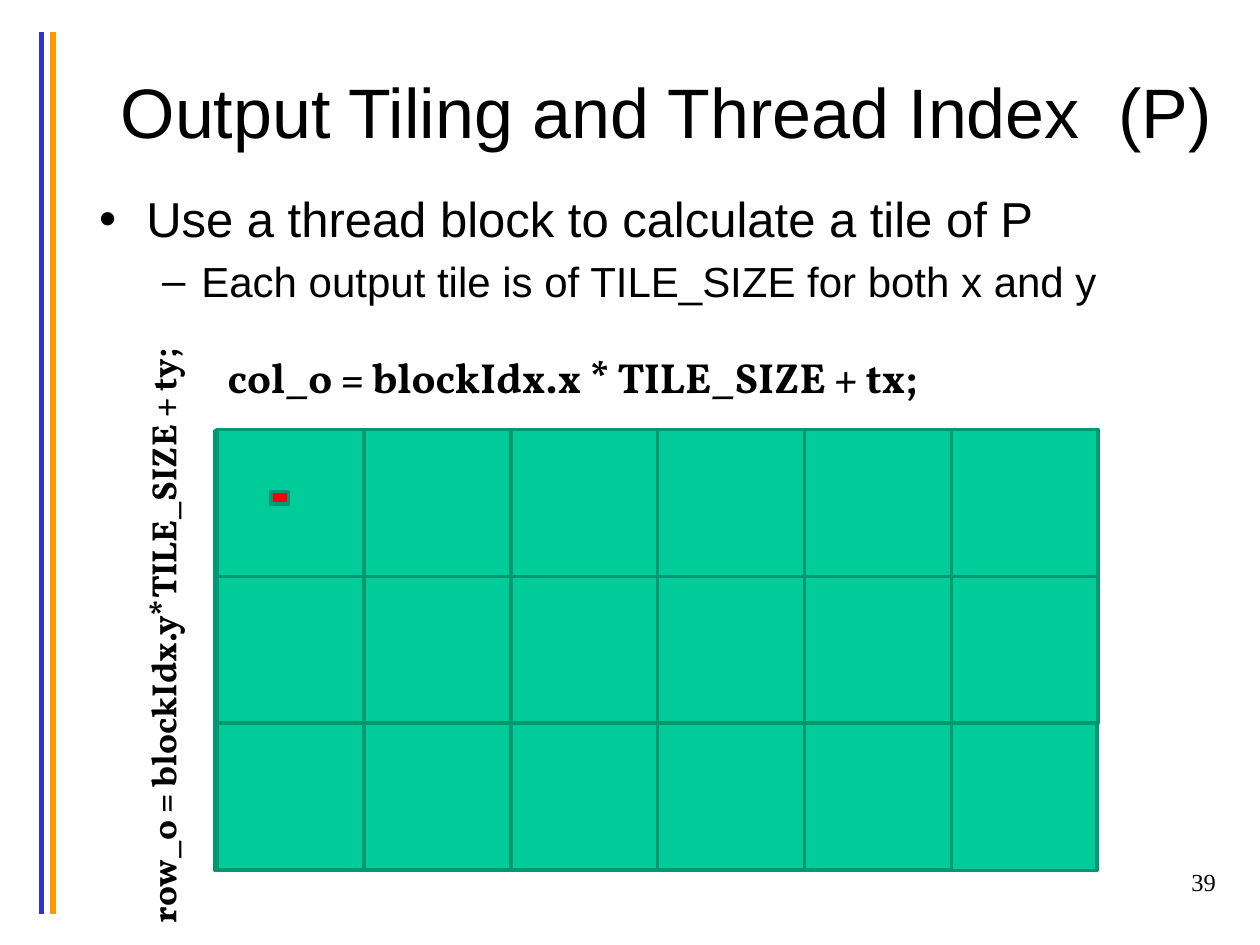
from lxml import etree
from pptx import Presentation
from pptx import util as u
from pptx.dml.color import RGBColor
from pptx.enum import shapes as kinds, text
from pptx.oxml.ns import qn

Cm, Pt = u.Cm, u.Pt


def paint(color_format, hex_string):
    color_format.rgb = RGBColor.from_string(hex_string)


def style(paragraph, size, font, bold=False):
    for run in paragraph.runs:
        run.font.size = Pt(size)
        run.font.name = font
        run.font.bold = bold
        paint(run.font.color, "000000")


prs = Presentation()
prs.slide_width, prs.slide_height = Cm(25.4), Cm(19.05)
slide = prs.slides.add_slide(prs.slide_layouts[5])

# Stripes along the left edge
for x, color in ((0.84, "3333CC"), (1.07, "FF9900")):
    stripe = slide.shapes.add_connector(
        kinds.MSO_CONNECTOR.STRAIGHT, Cm(x), Cm(0.64), Cm(x), Cm(18.42))
    stripe.line.width = Pt(3)
    paint(stripe.line.color, color)
    etree.SubElement(stripe._element.spPr, qn("a:effectLst"))

title = slide.shapes.title
title.left, title.top, title.width, title.height = Cm(1.9), Cm(0.64), Cm(23.06), Cm(3.18)
title.text_frame.text = "Output Tiling and Thread Index  (P)"
title.text_frame.vertical_anchor = text.MSO_ANCHOR.MIDDLE
title.text_frame.paragraphs[0].alignment = text.PP_ALIGN.CENTER
style(title.text_frame.paragraphs[0], 40, "Arial")

# Bulleted statement and its detail: text, level, size, indent, hanging, bullet
points = (
    ("Use a thread block to calculate a tile of P", 0, 28, 0.95, 0.95, "•"),
    ("Each output tile is of TILE_SIZE for both x and y", 1, 24, 2.06, 0.79, "–"),
)
body = slide.shapes.add_textbox(Cm(1.75), Cm(3.68), Cm(23.06), Cm(12.7)).text_frame
body.word_wrap = True
body.text = "\n".join(point[0] for point in points)
for paragraph, (_, level, size, indent, hanging, bullet) in zip(body.paragraphs, points):
    paragraph.level = level
    paragraph.space_before = Pt(size * 0.2)
    style(paragraph, size, "Arial")
    properties = paragraph._p.get_or_add_pPr()
    properties.set("marL", str(Cm(indent)))
    properties.set("indent", str(-Cm(hanging)))
    etree.SubElement(properties, qn("a:buFont")).set("typeface", "Arial")
    etree.SubElement(properties, qn("a:buChar")).set("char", bullet)

number = slide.shapes.add_textbox(Cm(19.48), Cm(17.35), Cm(5.28), Cm(1.27)).text_frame
number.word_wrap = True
number.text = "39"
number.paragraphs[0].alignment = text.PP_ALIGN.RIGHT
style(number.paragraphs[0], 14, "Times New Roman")

# Matrix P, its tiles (the matrix itself shows as the last one) and one element
COLUMNS, ROWS, TILE = 6, 3, 2.96
matrix = (4.34, 8.69, 17.78, 8.86, "00CC99")
tiles = [(4.38 + column * TILE, 8.66 + row * TILE, TILE, TILE, "00CC99")
         for row in range(ROWS) for column in range(COLUMNS)][:-1]
element = (5.46, 9.91, 0.36, 0.25, "FF0000")
for left, top, width, height, color in [matrix, *tiles, element]:
    box = slide.shapes.add_shape(
        kinds.MSO_SHAPE.RECTANGLE, Cm(left), Cm(top), Cm(width), Cm(height))
    box.shadow.inherit = False
    box.fill.solid()
    paint(box.fill.fore_color, color)
    paint(box.line.color, "009771")
    box.line.width = Pt(2)

# Index formulas along the two sides of the matrix
column_index = slide.shapes.add_textbox(Cm(4.34), Cm(6.96), Cm(16.69), Cm(1.27))
column_index.text_frame.text = "col_o = blockIdx.x * TILE_SIZE + tx;"
style(column_index.text_frame.paragraphs[0], 24, "Vollkorn", bold=True)

row_index = slide.shapes.add_textbox(Cm(-3.18), Cm(11.99), Cm(12.93), Cm(1.12))
row_index.rotation = 270
row_index.fill.solid()
paint(row_index.fill.fore_color, "FFFFFF")
row_index.text_frame.margin_left = Cm(0.4)
row_index.text_frame.text = "row_o = blockIdx.y*TILE_SIZE + ty;"
style(row_index.text_frame.paragraphs[0], 20, "Vollkorn", bold=True)

for formula in (column_index, row_index):
    formula.text_frame.word_wrap = True
    formula.text_frame.auto_size = text.MSO_AUTO_SIZE.SHAPE_TO_FIT_TEXT

prs.save("out.pptx")
